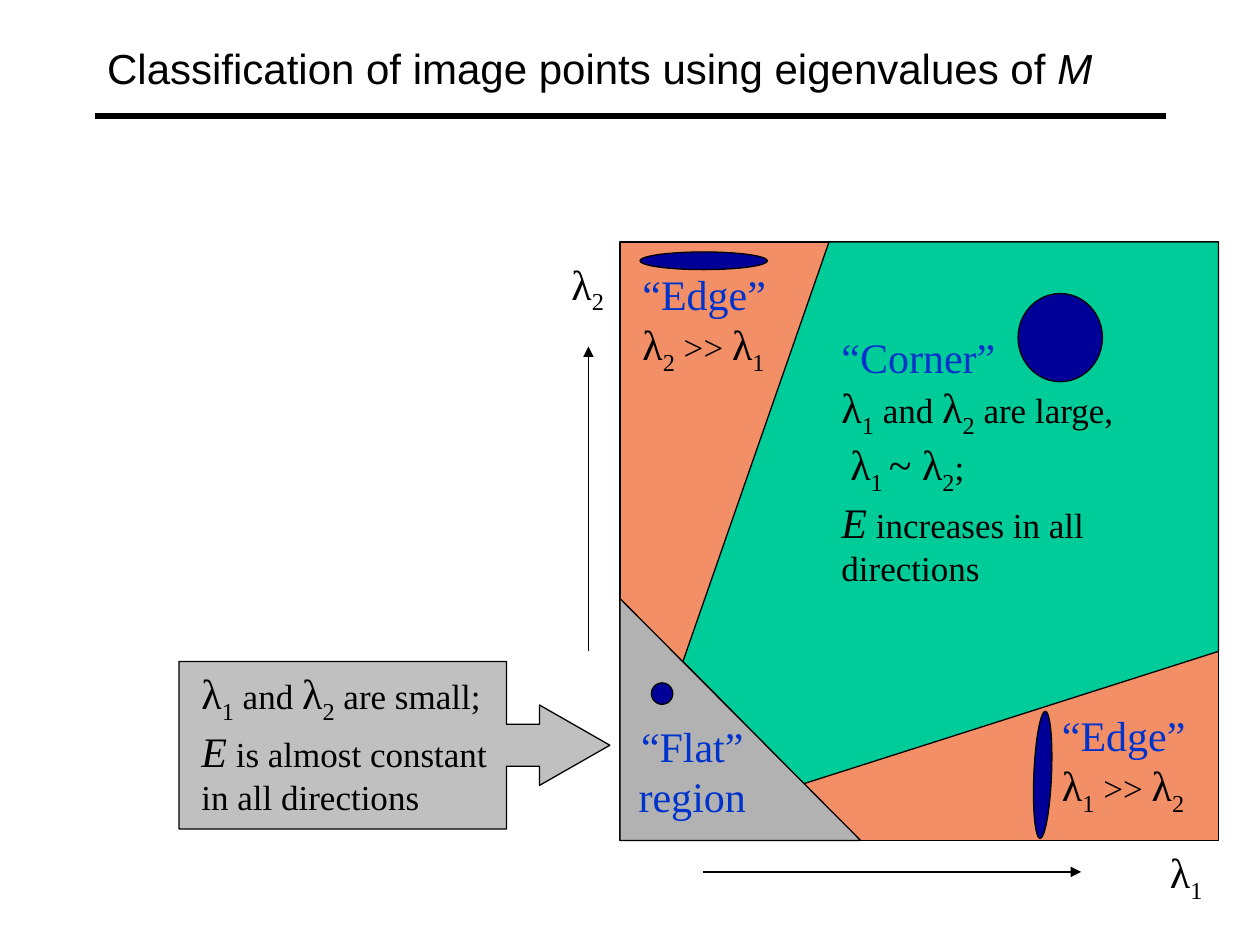
"""Build a slide that classifies image points by the eigenvalues of M."""
from lxml import etree
from pptx import Presentation
from pptx.dml.color import RGBColor
from pptx.enum.shapes import MSO_CONNECTOR, MSO_SHAPE
from pptx.enum.text import MSO_ANCHOR, MSO_AUTO_SIZE, PP_ALIGN
from pptx.oxml.ns import qn
from pptx.util import Inches, Pt

STRAIGHT = MSO_CONNECTOR.STRAIGHT
CALLOUT, RECTANGLE = MSO_SHAPE.RIGHT_ARROW_CALLOUT, MSO_SHAPE.RECTANGLE
TRIANGLE, OVAL = MSO_SHAPE.RIGHT_TRIANGLE, MSO_SHAPE.OVAL
MIDDLE, GROW = MSO_ANCHOR.MIDDLE, MSO_AUTO_SIZE.SHAPE_TO_FIT_TEXT
LEFT, CENTER = PP_ALIGN.LEFT, PP_ALIGN.CENTER

BLACK = RGBColor(0x00, 0x00, 0x00)
SILVER = RGBColor(0xC0, 0xC0, 0xC0)
GRAY = RGBColor(0xB2, 0xB2, 0xB2)
ORANGE = RGBColor(0xF3, 0x8F, 0x67)
GREEN = RGBColor(0x00, 0xCC, 0x99)
NAVY = RGBColor(0x00, 0x00, 0x99)
BLUE = RGBColor(0x00, 0x33, 0xCC)

STYLES = {
    "heading": {"color": BLUE},
    "symbol": {},
    "sub": {"baseline": -25000},
    "body": {"size": 20},
    "italic": {"italic": True},
}

TITLE = [("Classification of image points using eigenvalues of ", "symbol"), ("M", "italic")]
LAMBDA_1 = [("λ", "symbol"), ("1", "sub")]
LAMBDA_2 = [("λ", "symbol"), ("2", "sub")]
BOTH = [*LAMBDA_1, (" and ", "body"), *LAMBDA_2]
MUCH_LARGER = (" >> ", "body")
EDGE = [("“Edge”", "heading")]

TEXTS = [
    ((9, 6.67, 0.83, 0.5), CENTER, [LAMBDA_1]),
    ((4.08, 2, 1.17, 0.5), CENTER, [LAMBDA_2]),
    ((6.58, 2.58, 2.92, 2.03), LEFT, [
        [("“Corner”", "heading")],
        [*BOTH, (" are large,", "body")],
        [(" ", "body"), ("λ", "symbol"), ("1 ", "sub"), ("~ ", "symbol"), *LAMBDA_2, (";", "body")],
        [("E", "italic"), (" increases in all directions", "body")],
    ]),
    ((1.5, 5.25, 2.58, 1.23), LEFT, [
        [*BOTH, (" are small;", "body")],
        [("E", "italic"), (" is almost constant in all directions", "body")],
    ]),
    ((8.33, 5.58, 1.42, 0.9), LEFT, [EDGE, [*LAMBDA_1, MUCH_LARGER, *LAMBDA_2]]),
    ((5, 2.08, 1.42, 0.9), LEFT, [EDGE, [*LAMBDA_2, MUCH_LARGER, *LAMBDA_1]]),
    ((4.83, 5.67, 1.33, 0.9), CENTER, [[("“Flat” region", "heading")]]),
]

CALLOUT_PLACE = (1.42, 5.25, 3.42, 1.33)
CALLOUT_ADJUSTMENTS = (0.25, 0.24, 0.42, 0.76)
PLOT_PLACE = (4.92, 1.92, 4.75, 4.75)
CORNER_REGION = [(5.42, 5.25), (6.58, 1.92), (9.67, 1.92), (9.67, 5.17), (6.38, 6.22)]
FLAT_PLACE = (4.92, 4.75, 1.91, 1.92)
ELLIPSES = [
    ((8.08, 2.33, 0.67, 0.7), 0),
    ((5.08, 2, 1.01, 0.14), 0),
    ((5.17, 5.42, 0.17, 0.17), 0),
    ((7.77, 6.08, 1.01, 0.14), 92.4),
]
TITLE_RULE = ((0.75, 0.92), (9.25, 0.92))
AXES = [((5.58, 6.92), (8.58, 6.92)), ((4.67, 5.17), (4.67, 2.75))]


def inches(values):
    return [Inches(value) for value in values]


def paint(shape, color):
    shape.shadow.inherit = False
    shape.fill.solid()
    shape.fill.fore_color.rgb = color
    shape.line.color.rgb = BLACK
    shape.line.width = Pt(0.75)


def add_shape(page, kind, place, color):
    shape = page.shapes.add_shape(kind, *inches(place))
    paint(shape, color)
    return shape


def add_line(page, start, end, width, arrow=False):
    line = page.shapes.add_connector(STRAIGHT, *inches(start + end))
    line.line.color.rgb = BLACK
    line.line.width = Pt(width)
    if arrow:
        etree.SubElement(line.line._get_or_add_ln(), qn("a:tailEnd"), type="triangle")
    etree.SubElement(line._element.spPr, qn("a:effectLst"))


def add_spans(para, spans, font_name):
    for text, style_name in spans:
        style = STYLES[style_name]
        span = para.add_run()
        span.text = text
        span.font.name = font_name
        span.font.size = Pt(style.get("size", 24))
        span.font.color.rgb = style.get("color", BLACK)
        span.font.italic = style.get("italic", False)
        if "baseline" in style:
            span._r.get_or_add_rPr().set("baseline", str(style["baseline"]))


def add_text(page, place, alignment, lines):
    box = page.shapes.add_textbox(*inches(place))
    box.text_frame.word_wrap = True
    box.text_frame.auto_size = GROW
    para = box.text_frame.paragraphs[0]
    para.alignment = alignment
    for index, spans in enumerate(lines):
        if index:
            para.add_line_break()
        add_spans(para, spans, "Times New Roman")


def add_title(page):
    title = page.shapes.title
    title.left, title.top, title.width, title.height = inches((0.75, 0.08, 8.5, 0.92))
    title.text_frame.vertical_anchor = MIDDLE
    para = title.text_frame.paragraphs[0]
    para.alignment = LEFT
    add_spans(para, TITLE, "Arial")


def add_corner_region(page):
    points = [inches(point) for point in CORNER_REGION]
    builder = page.shapes.build_freeform(*points[0])
    builder.add_line_segments(points[1:], close=True)
    paint(builder.convert_to_shape(), GREEN)


def main():
    deck = Presentation()
    deck.slide_width, deck.slide_height = Inches(10), Inches(7.5)
    page = deck.slides.add_slide(deck.slide_layouts[5])
    add_title(page)
    add_line(page, *TITLE_RULE, 3)
    callout = add_shape(page, CALLOUT, CALLOUT_PLACE, SILVER)
    for index, value in enumerate(CALLOUT_ADJUSTMENTS):
        callout.adjustments[index] = value
    add_shape(page, RECTANGLE, PLOT_PLACE, ORANGE)
    add_corner_region(page)
    add_shape(page, TRIANGLE, FLAT_PLACE, GRAY)
    for place, alignment, lines in TEXTS:
        add_text(page, place, alignment, lines)
    for place, rotation in ELLIPSES:
        add_shape(page, OVAL, place, NAVY).rotation = rotation
    for start, end in AXES:
        add_line(page, start, end, 0.75, arrow=True)
    deck.save("out.pptx")


if __name__ == "__main__":
    main()
